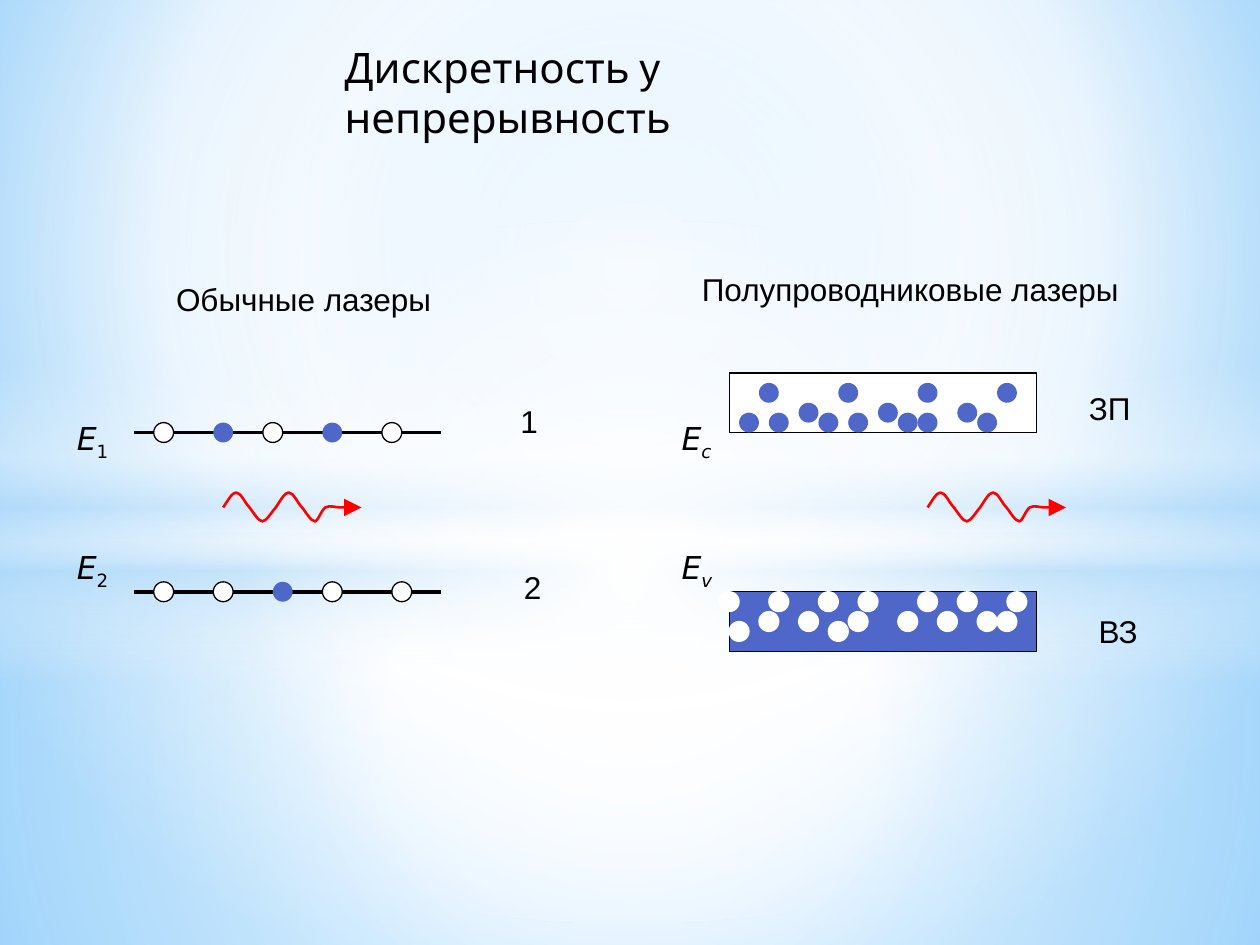
from lxml import etree
from pptx import Presentation
from pptx import util as u
from pptx.dml.color import RGBColor
from pptx.enum import shapes, text
from pptx.oxml import ns

BLUE, WHITE, BLACK, RED, SKY = "4E67C8", "FFFFFF", "000000", "FF0000", "B4DCFA"
DOT = 0.4
UPPER_LEVEL, LOWER_LEVEL = 8.72, 11.93
PERIOD = 1.06
CREST = [((0.1, -0.15), (0.18, -0.3), (0.26, -0.3)),
         ((0.36, -0.3), (0.43, -0.1), (0.53, 0)),
         ((0.61, 0.1), (0.71, 0.28), (0.79, 0.28))]
RISE = [((0.87, 0.28), (0.97, 0.1), (1.06, 0))]
WAVE_END = [((1.91, 0.28), (1.98, 0.05), (2.06, 0)),
            ((2.16, -0.05), (2.24, 0), (2.36, 0)),
            ((2.49, 0), (2.64, 0), (2.79, 0))]
WAVE = CREST + RISE + [tuple((x + PERIOD, y) for x, y in curve) for curve in CREST] + WAVE_END


def color(value):
    return RGBColor.from_string(value)


def add_xml(parent, tag, **attributes):
    child = etree.SubElement(parent, ns.qn(tag))
    for name, value in attributes.items():
        child.set(name, str(value))
    return child


def set_gradient(owner, stops, focus=None):
    placeholder = owner.find(".//" + ns.qn("a:noFill"))
    gradient = etree.Element(ns.qn("a:gradFill"), rotWithShape="1")
    stop_list = add_xml(gradient, "a:gsLst")
    for position, value, opacity in stops:
        stop = add_xml(stop_list, "a:gs", pos=position * 1000)
        add_xml(add_xml(stop, "a:srgbClr", val=value), "a:alpha", val=opacity * 1000)
    if focus:
        circle = add_xml(gradient, "a:path", path="circle")
        add_xml(circle, "a:fillToRect",
                **{side: share * 1000 for side, share in zip("ltrb", focus)})
    else:
        add_xml(gradient, "a:lin", ang=90 * 60000, scaled=0)
    placeholder.getparent().replace(placeholder, gradient)


def add_figure(slide, kind, left, top, width, height, fill=None, outline=None):
    figure = slide.shapes.add_shape(kind, u.Cm(left), u.Cm(top), u.Cm(width), u.Cm(height))
    figure.shadow.inherit = False
    if fill:
        figure.fill.solid()
        figure.fill.fore_color.rgb = color(fill)
    else:
        figure.fill.background()
    if outline:
        figure.line.color.rgb = color(outline)
        figure.line.width = u.Pt(0.75)
    else:
        figure.line.fill.background()
    return figure


def add_glow(slide, kind, top, height, stops, focus=None):
    glow = add_figure(slide, kind, 0, top, 25.4, height)
    set_gradient(glow._element, stops, focus)


def add_dots(slide, top, lefts, fill, outline=None):
    for left in lefts:
        add_figure(slide, shapes.MSO_SHAPE.OVAL, left, top, DOT, DOT, fill, outline)


def add_band(slide, top, fill):
    add_figure(slide, shapes.MSO_SHAPE.RECTANGLE, 14.7, top, 6.2, 1.2, fill, BLACK)


def add_level(slide, y, empty, filled):
    level = slide.shapes.add_connector(shapes.MSO_CONNECTOR.STRAIGHT,
                                       u.Cm(2.7), u.Cm(y), u.Cm(8.9), u.Cm(y))
    level.line.color.rgb = color(BLACK)
    level.line.width = u.Pt(2)
    add_xml(level._element.spPr, "a:effectLst")
    add_dots(slide, y - DOT / 2, empty, WHITE, BLACK)
    add_dots(slide, y - DOT / 2, filled, BLUE)


def add_label(slide, left, top, width, runs, size=18, wrap=False):
    label = slide.shapes.add_textbox(u.Cm(left), u.Cm(top), u.Cm(width), u.Cm(1.02))
    frame = label.text_frame
    frame.word_wrap = wrap
    frame.auto_size = text.MSO_AUTO_SIZE.SHAPE_TO_FIT_TEXT
    for words, font, italic, baseline in runs:
        run = frame.paragraphs[0].add_run()
        run.text = words
        run.font.name = font
        run.font.size = u.Pt(size)
        run.font.italic = italic
        run.font.color.rgb = color(BLACK)
        if baseline:
            run._r.get_or_add_rPr().set("baseline", str(baseline * 1000))


def add_energy(slide, left, top, index, italic):
    add_label(slide, left, top, 1.18, [("E", "DejaVu Sans", True, 0),
                                       (index, "DejaVu Sans", italic, -25)])


def add_photon(slide, left, middle):
    builder = slide.shapes.build_freeform(u.Cm(left), u.Cm(middle))
    builder.add_line_segments([(u.Cm(left + x), u.Cm(middle + y)) for _, _, (x, y) in WAVE],
                              close=False)
    photon = builder.convert_to_shape()
    photon.shadow.inherit = False
    photon.fill.background()
    photon.line.color.rgb = color(RED)
    photon.line.width = u.Pt(1.5)
    add_xml(photon.line._get_or_add_ln(), "a:tailEnd", type="triangle", w="lg", len="lg")
    segments = list(photon._element.iter(ns.qn("a:lnTo")))
    for segment, curve in zip(segments, WAVE):
        bend = etree.Element(ns.qn("a:cubicBezTo"))
        for x, y in curve:
            add_xml(bend, "a:pt", x=u.Cm(left + x) - photon.left,
                    y=u.Cm(middle + y) - photon.top)
        segment.getparent().replace(segment, bend)


def add_backdrop(slide):
    center = (50, 50, 50, 50)
    rectangle = shapes.MSO_SHAPE.RECTANGLE
    slide.background.fill.background()
    set_gradient(slide._element, [(0, "9ED5FF", 100), (60, WHITE, 100), (100, "5BB9FF", 100)],
                 (20, 10, 20, 60))
    add_glow(slide, rectangle, 10.74, 8.31,
             [(0, WHITE, 91), (37, WHITE, 76), (100, SKY, 79)], center)
    add_glow(slide, rectangle, 0, 10.74,
             [(0, WHITE, 89), (48, WHITE, 62), (100, SKY, 79)], center)
    add_glow(slide, rectangle, 7.37, 6.35,
             [(0, WHITE, 0), (29, WHITE, 30), (45, SKY, 40),
              (55, WHITE, 26), (65, SKY, 60), (100, WHITE, 0)])
    add_glow(slide, shapes.MSO_SHAPE.OVAL, 4.45, 14.17,
             [(0, WHITE, 100), (54, WHITE, 0)], center)


def main():
    deck = Presentation()
    deck.slide_width, deck.slide_height = u.Cm(25.4), u.Cm(19.05)
    slide = deck.slides.add_slide(deck.slide_layouts[6])
    add_backdrop(slide)

    add_label(slide, 6.7, 0.71, 13.2,
              [("Дискретность ", "Cabin", False, 0), ("у ", "Arial", False, 0),
               ("непрерывность", "Cabin", False, 0)], 24, True)

    for words, left, top, width in [("Обычные лазеры", 3.3, 5.53, 5.66),
                                    ("Полупроводниковые лазеры", 13.9, 5.32, 8.97),
                                    ("1", 10.24, 7.98, 0.86), ("2", 10.31, 11.33, 0.86),
                                    ("ЗП", 21.7, 7.72, 1.35), ("ВЗ", 21.9, 12.22, 1.32)]:
        add_label(slide, left, top, width, [(words, "Arial", False, 0)])

    add_level(slide, UPPER_LEVEL, [3.1, 5.3, 7.7], [4.3, 6.5])
    add_level(slide, LOWER_LEVEL, [3.1, 4.3, 6.5, 7.9], [5.5])

    add_band(slide, UPPER_LEVEL - 1.2, WHITE)
    for top, electrons in [(7.72, [15.3, 16.9, 18.5, 20.1]),
                           (8.12, [16.1, 17.7, 19.3]),
                           (8.32, [14.9, 15.5, 16.5, 17.1, 18.1, 18.5, 19.7])]:
        add_dots(slide, top, electrons, BLUE)

    add_band(slide, LOWER_LEVEL, BLUE)
    for top, holes in [(11.93, [14.5, 15.5, 16.5, 17.3, 18.5, 19.3, 20.3]),
                       (12.33, [15.3, 16.1, 17.1, 18.1, 18.9, 19.7, 20.1]),
                       (12.53, [14.7, 16.7])]:
        add_dots(slide, top, holes, WHITE, WHITE)

    for left, top, index, italic in [(1.3, 8.33, "1", False), (1.3, 10.92, "2", False),
                                     (13.49, 8.33, "с", True), (13.49, 10.92, "v", True)]:
        add_energy(slide, left, top, index, italic)
    for left in (4.5, 18.7):
        add_photon(slide, left, 10.23)

    deck.save("out.pptx")


if __name__ == "__main__":
    main()
